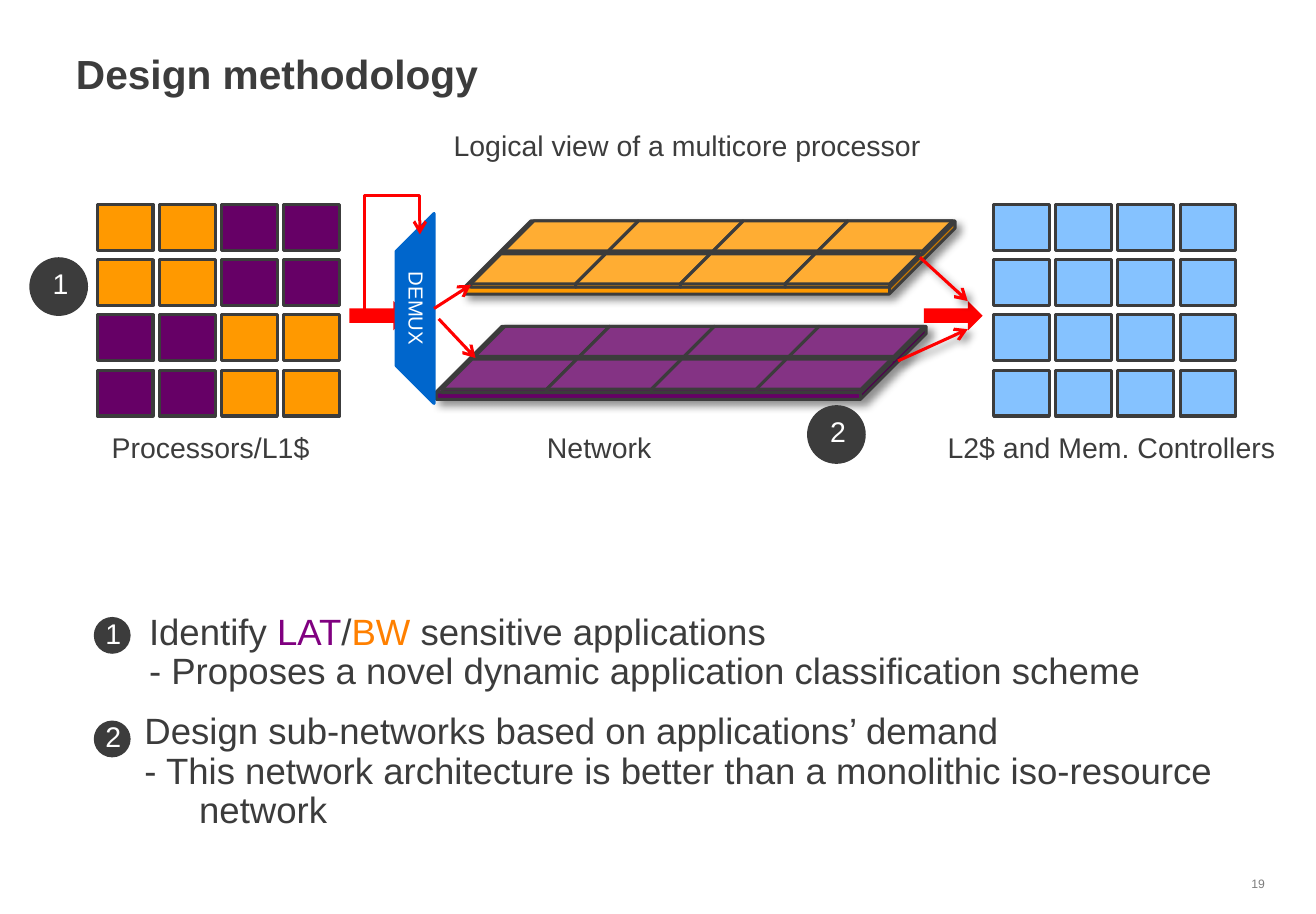
import pptx
import pptx.dml.color
import pptx.enum.shapes
import pptx.enum.text
import pptx.oxml
import pptx.oxml.ns
import pptx.util
from lxml import etree

Cm = pptx.util.Cm
Pt = pptx.util.Pt
SHAPE = pptx.enum.shapes.MSO_SHAPE
CONNECTOR = pptx.enum.shapes.MSO_CONNECTOR
ALIGN = pptx.enum.text.PP_ALIGN
qn = pptx.oxml.ns.qn

DARK, WHITE, RED = "3C3C3C", "FFFFFF", "FF0000"
ORANGE, PURPLE, SKY, BLUE = "FF9900", "660066", "85C2FF", "0066CC"

SHADOW = (
    '<a:outerShdw xmlns:a="http://schemas.openxmlformats.org/drawingml/2006/main"'
    ' blurRad="50800" dist="38100" dir="2700000" algn="tl" rotWithShape="0">'
    '<a:srgbClr val="000000"><a:alpha val="43000"/></a:srgbClr></a:outerShdw>'
)


def rgb(value):
    return pptx.dml.color.RGBColor.from_string(value)


def style_paragraph(paragraph, size, color, align=ALIGN.LEFT, spacing=0.9):
    paragraph.alignment = align
    paragraph.line_spacing = spacing
    paragraph.font.name = "Arial"
    paragraph.font.size = Pt(size)
    paragraph.font.color.rgb = rgb(color)


def add_frame(slide, left, top, width, height):
    frame = slide.shapes.add_textbox(Cm(left), Cm(top), Cm(width), Cm(height)).text_frame
    frame.word_wrap = True
    return frame


def add_label(slide, text, left, top, width, height=0.81, size=14, color=DARK):
    paragraph = add_frame(slide, left, top, width, height).paragraphs[0]
    paragraph.text = text
    style_paragraph(paragraph, size, color, ALIGN.CENTER)


def add_heading(slide, text, box, size, color, bold=False, spacing=0.9):
    frame = add_frame(slide, *box)
    frame.margin_left = frame.margin_right = Cm(0.18)
    frame.margin_top = frame.margin_bottom = Cm(0.1)
    paragraph = frame.paragraphs[0]
    paragraph.text = text
    style_paragraph(paragraph, size, color, spacing=spacing)
    paragraph.font.bold = bold


def add_point(slide, box, lines):
    """Each line is a list of (text, colour) pieces, set with a hanging indent."""
    frame = add_frame(slide, *box)
    for number, pieces in enumerate(lines):
        paragraph = frame.add_paragraph() if number else frame.paragraphs[0]
        style_paragraph(paragraph, 18, DARK)
        properties = paragraph._p.get_or_add_pPr()
        properties.set("marL", str(Cm(0.95)))
        properties.set("indent", str(-Cm(0.95)))
        for text, color in pieces:
            run = paragraph.add_run()
            run.text = text
            if color != DARK:
                run.font.color.rgb = rgb(color)


def add_block(slide, kind, left, top, width, height, fill, line=None):
    block = slide.shapes.add_shape(kind, Cm(left), Cm(top), Cm(width), Cm(height))
    block.shadow.inherit = False
    block.fill.solid()
    block.fill.fore_color.rgb = rgb(fill)
    if line:
        block.line.color.rgb = rgb(line)
        block.line.width = Pt(1.5)
    else:
        block.line.fill.background()
    return block


def add_cell_grid(slide, left, color_at):
    for row in range(4):
        for column in range(4):
            add_block(slide, SHAPE.RECTANGLE, left + 1.08 * column, 3.55 + 0.96 * row,
                      0.97, 0.8, color_at(row, column), DARK)


def add_slab(slide, left, top, width, height, fill):
    slab = add_block(slide, SHAPE.CUBE, left, top, width, height, fill, DARK)
    slab.adjustments[0] = 0.9
    return slab


def add_subnetwork(slide, left, top, fill):
    base = add_slab(slide, left, top, 8.51, 1.27, fill)
    effects = base._element.spPr.find(qn("a:effectLst"))
    effects.append(pptx.oxml.parse_xml(SHADOW))
    for column in range(4):
        for row, shift in enumerate((0.67, 0.1)):
            add_slab(slide, left + shift + 1.82 * column, top + 0.57 * row, 2.34, 0.58, fill)


def add_arrow(slide, start, end, kind=CONNECTOR.STRAIGHT, shadow=False):
    arrow = slide.shapes.add_connector(kind, *(Cm(length) for length in (*start, *end)))
    arrow.line.color.rgb = rgb(RED)
    arrow.line.width = Pt(1.5)
    properties = arrow._element.spPr
    etree.SubElement(properties.find(qn("a:ln")), qn("a:tailEnd"), type="arrow")
    effects = etree.SubElement(properties, qn("a:effectLst"))
    if shadow:
        effects.append(pptx.oxml.parse_xml(SHADOW))
    return arrow


def add_feedback_arrow(slide):
    """Loop that leaves the input arrow and enters the demultiplexer from above."""
    properties = add_arrow(slide, (7.49, 5.23), (6.14, 4.27), CONNECTOR.ELBOW)._element.spPr
    properties.find(qn("a:xfrm")).set("rot", str(90 * 60000))
    guides = properties.find(qn("a:prstGeom")).get_or_add_avLst()
    etree.SubElement(guides, qn("a:gd"), name="adj1", fmla="val 149600")


def add_demux(slide):
    demux = add_block(slide, SHAPE.FLOWCHART_MANUAL_OPERATION, 5.56, 5.03, 3.3, 0.66, BLUE, BLUE)
    demux.rotation = 90
    frame = demux.text_frame
    frame.vertical_anchor = pptx.enum.text.MSO_ANCHOR.MIDDLE
    frame.paragraphs[0].text = "DEMUX"
    style_paragraph(frame.paragraphs[0], 10, WHITE, ALIGN.CENTER)


def add_badge(slide, number, left, top, diameter, label_box):
    """label_box is the number's offset from the disc, then its size."""
    dx, dy, width, height = label_box
    add_block(slide, SHAPE.OVAL, left, top, diameter, diameter, DARK)
    add_label(slide, number, left + dx, top + dy, width, height, color=WHITE)


def add_diagram(slide):
    add_cell_grid(slide, 17.26, lambda row, column: SKY)
    for text, left, top, width in (
        ("Processors/L1$", 1.35, 7.42, 4.62),
        ("Network", 8.1, 7.42, 4.62),
        ("L2$ and Mem. Controllers", 16.15, 7.42, 6.32),
        ("Logical view of a multicore processor", 7.37, 2.16, 9.14),
    ):
        add_label(slide, text, left, top, width)
    for left in (16.05, 6.07):
        add_block(slide, SHAPE.RIGHT_ARROW, left, 5.23, 1.02, 0.51, RED)
    add_cell_grid(slide, 1.69,
                  lambda row, column: ORANGE if row // 2 == column // 2 else PURPLE)
    add_subnetwork(slide, 8.08, 3.84, ORANGE)
    add_subnetwork(slide, 7.58, 5.67, PURPLE)
    for number, left, top in (("1", 0.51, 4.47), ("2", 14.02, 7.04)):
        add_badge(slide, number, left, top, 1.02, (0.12, 0.1, 0.84, 0.81))
    add_demux(slide)
    add_feedback_arrow(slide)
    add_arrow(slide, (7.62, 5.54), (8.26, 6.22))
    add_arrow(slide, (7.54, 5.36), (8.18, 4.95))
    add_arrow(slide, (15.98, 4.47), (16.81, 5.23), shadow=True)
    add_arrow(slide, (15.6, 6.27), (16.81, 5.72), shadow=True)


def add_points(slide):
    for number, top in (("1", 10.72), ("2", 12.52)):
        add_badge(slide, number, 1.63, top, 0.64, (-0.05, -0.08, 0.53, 0.51))
    add_point(slide, (2.34, 10.54, 20.8, 1.65), [
        [("Identify ", DARK), ("LAT", "800080"), ("/", DARK), ("BW", "FF8000"),
         (" sensitive applications", DARK)],
        [("- Proposes a novel dynamic application classification scheme", DARK)],
    ])
    add_point(slide, (2.26, 12.27, 19.48, 2.34), [
        [("Design sub-networks based on applications’ demand", DARK)],
        [("- This network architecture is better than a monolithic iso-resource network", DARK)],
    ])


def main():
    presentation = pptx.Presentation()
    presentation.slide_width, presentation.slide_height = Cm(22.86), Cm(15.88)
    slide = presentation.slides.add_slide(presentation.slide_layouts[6])
    add_heading(slide, "Design methodology", (1.14, 0.84, 20.57, 1.09), 20, DARK, bold=True)
    add_heading(slide, "19", (21.56, 15.14, 0.76, 0.43), 6, "7D7D7D", spacing=0.95)
    add_diagram(slide)
    add_points(slide)
    presentation.save("out.pptx")


if __name__ == "__main__":
    main()
